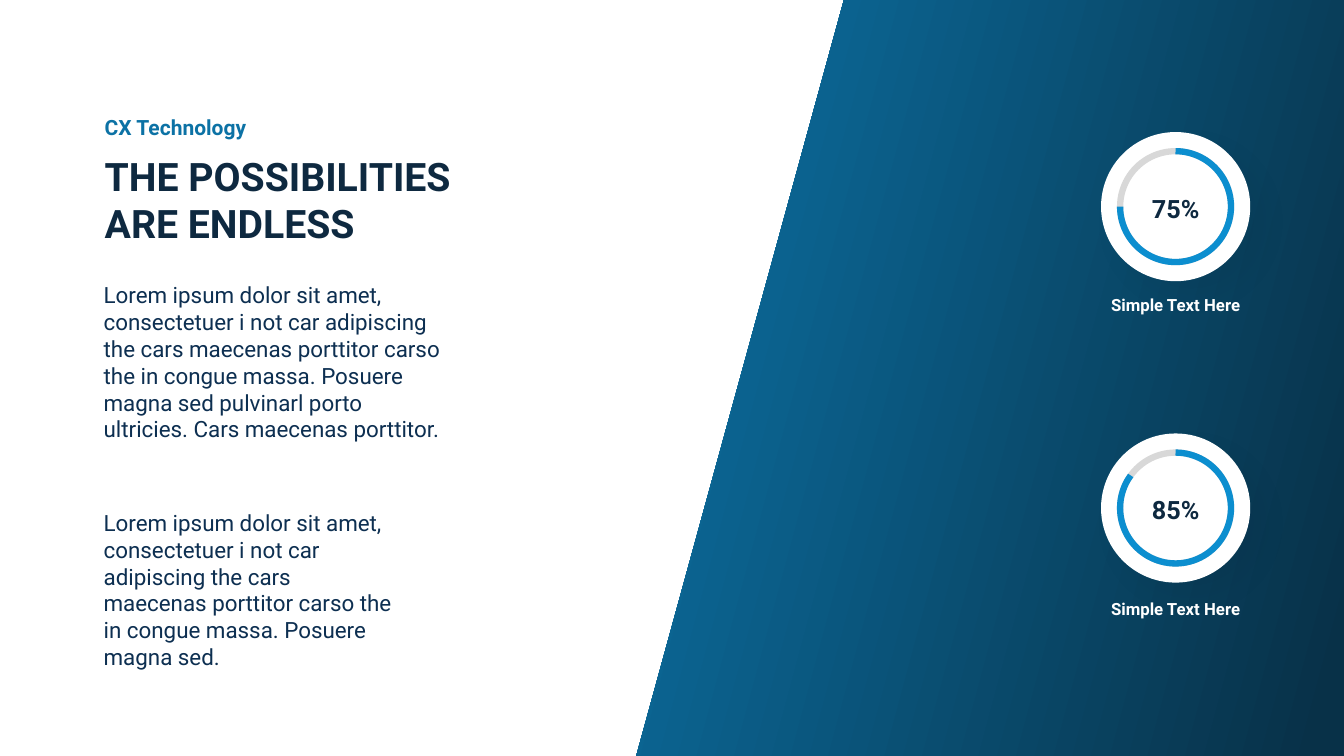
from lxml.etree import SubElement
from pptx import Presentation
from pptx.dml.color import RGBColor
from pptx.enum.shapes import MSO_SHAPE
from pptx.enum.text import PP_ALIGN
from pptx.oxml.ns import qn
from pptx.util import Inches, Pt

WIDTH, HEIGHT = 13.33, 7.5
NAVY, BLUE, WHITE = "0E2940", "0C72A5", "FFFFFF"
BODY, TRACK, PROGRESS = "0D2F51", "D8D8D8", "0C8ECF"
GRADIENT = [(0, BLUE), (0.97, "083148")]
PANEL_TOP, PANEL_BOTTOM = 8.37, 6.31

COPY = [
    ("CX Technology", (0.94, 1.09, 4.05, 0.35), 15, BLUE, True),
    ("THE POSSIBILITIES ARE ENDLESS", (0.94, 1.46, 4.18, 1.04), 28, NAVY, True),
    ("Lorem ipsum dolor sit amet, consectetuer i not car adipiscing the cars "
     "maecenas porttitor carso the in congue massa. Posuere magna sed pulvinarl "
     "porto ultricies. Cars maecenas porttitor.",
     (0.93, 2.74, 3.65, 1.72), 16, BODY, False),
    ("Lorem ipsum dolor sit amet, consectetuer i not car adipiscing the cars "
     "maecenas porttitor carso the in congue massa. Posuere magna sed.",
     (0.93, 5, 3.12, 1.72), 16, BODY, False),
]
GAUGES = [
    (75, "Simple Text Here", 2.05, 2.87),
    (85, "Simple Text Here", 5.04, 5.89),
]
GAUGE_X, DISC, RING = 11.66, 1.48, 1.1


def color(value):
    return RGBColor.from_string(value)


def add_text(slide, words, box, size, ink, bold, align=PP_ALIGN.LEFT):
    frame = slide.shapes.add_textbox(*map(Inches, box)).text_frame
    frame.word_wrap = True
    frame.text = words
    paragraph = frame.paragraphs[0]
    paragraph.alignment = align
    font = paragraph.runs[0].font
    font.name, font.size, font.bold = "Roboto", Pt(size), bold
    font.color.rgb = color(ink)


def add_round(slide, preset, middle, size, fill=None, line=None):
    box = (GAUGE_X - size / 2, middle - size / 2, size, size)
    shape = slide.shapes.add_shape(preset, *map(Inches, box))
    shape.shadow.inherit = False
    if fill:
        shape.fill.solid()
        shape.fill.fore_color.rgb = color(fill)
    else:
        shape.fill.background()
    if line:
        shape.line.color.rgb = color(line)
        shape.line.width = Pt(4.5)
    else:
        shape.line.fill.background()
    return shape


def add_soft_shadow(shape):
    effects = shape._element.spPr.find(qn("a:effectLst"))
    shadow = SubElement(effects, qn("a:outerShdw"), blurRad=str(Pt(18)),
                        dist=str(Pt(15)), dir="2700000", algn="tl", rotWithShape="0")
    tint = SubElement(shadow, qn("a:srgbClr"), val="000000")
    SubElement(tint, qn("a:alpha"), val="4000")


def add_panel(slide):
    corners = [(WIDTH, 0), (WIDTH, HEIGHT), (PANEL_BOTTOM, HEIGHT)]
    outline = slide.shapes.build_freeform(Inches(PANEL_TOP), 0)
    outline.add_line_segments([(Inches(x), Inches(y)) for x, y in corners])
    panel = outline.convert_to_shape()
    panel.shadow.inherit = False
    panel.line.fill.background()
    panel.fill.gradient()
    panel.fill.gradient_angle = 345
    for stop, (position, tint) in zip(panel.fill.gradient_stops, GRADIENT):
        stop.position = position
        stop.color.rgb = color(tint)


def add_gauge(slide, percent, label, middle, label_top):
    add_soft_shadow(add_round(slide, MSO_SHAPE.OVAL, middle, DISC, fill=WHITE))
    add_round(slide, MSO_SHAPE.OVAL, middle, RING, line=TRACK)
    arc = add_round(slide, MSO_SHAPE.ARC, middle, RING, line=PROGRESS)
    end_angle = (270 + 3.6 * percent) % 360
    arc.adjustments[0] = 270 * 0.6
    arc.adjustments[1] = end_angle * 0.6
    for words, width, top, height, size, ink in (
        (f"{percent}%", 0.98, middle - 0.18, 0.4, 18, NAVY),
        (label, 1.81, label_top, 0.3, 12, WHITE),
    ):
        box = (GAUGE_X - width / 2, top, width, height)
        add_text(slide, words, box, size, ink, True, PP_ALIGN.CENTER)


def main():
    deck = Presentation()
    deck.slide_width, deck.slide_height = Inches(WIDTH), Inches(HEIGHT)
    slide = deck.slides.add_slide(deck.slide_layouts[6])
    add_panel(slide)
    for entry in COPY:
        add_text(slide, *entry)
    for gauge in GAUGES:
        add_gauge(slide, *gauge)
    deck.save("out.pptx")


if __name__ == "__main__":
    main()
